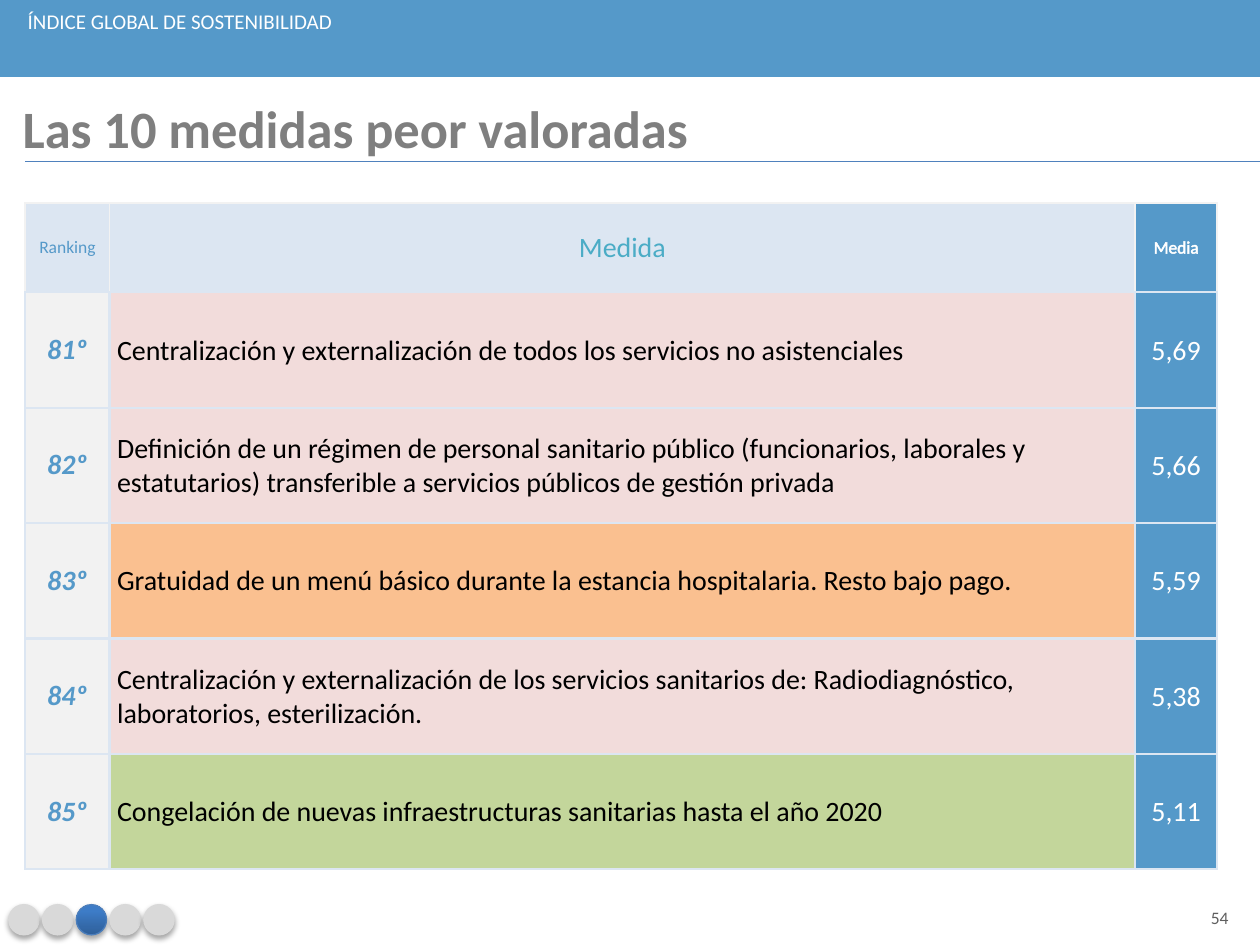
from lxml import etree
from pptx import Presentation
from pptx.dml.color import RGBColor
from pptx.enum.shapes import MSO_CONNECTOR, MSO_SHAPE
from pptx.enum.text import MSO_ANCHOR, PP_ALIGN
from pptx.oxml import parse_xml
from pptx.oxml.ns import qn
from pptx.util import Inches, Pt

LEFT, CENTER = PP_ALIGN.LEFT, PP_ALIGN.CENTER
TOP, MIDDLE = MSO_ANCHOR.TOP, MSO_ANCHOR.MIDDLE
RECT, OVAL = MSO_SHAPE.RECTANGLE, MSO_SHAPE.OVAL
NS = 'xmlns:a="http://schemas.openxmlformats.org/drawingml/2006/main"'

COLORS = {
    "blue": "5599C9", "teal": "4BACC6", "pale": "DCE6F2", "light": "F2F2F2",
    "pink": "F2DCDB", "orange": "FAC090", "green": "C3D69B", "white": "FFFFFF",
    "black": "000000", "title": "7F7F7F", "number": "5F5F5F", "rule": "4F81BD",
    "dot": "D9D9D9", "dot_low": "2F5F99", "dot_high": "3D7CC7", "dot_line": "4B7EBC",
}

MEASURES = [
    ("81º", "Centralización y externalización de todos los servicios no asistenciales",
     "5,69", "pink"),
    ("82º", "Definición de un régimen de personal sanitario público (funcionarios, "
     "laborales y estatutarios) transferible a servicios públicos de gestión privada",
     "5,66", "pink"),
    ("83º", "Gratuidad de un menú básico durante la estancia hospitalaria. "
     "Resto bajo pago.", "5,59", "orange"),
    ("84º", "Centralización y externalización de los servicios sanitarios de: "
     "Radiodiagnóstico, laboratorios, esterilización.", "5,38", "pink"),
    ("85º", "Congelación de nuevas infraestructuras sanitarias hasta el año 2020",
     "5,11", "green"),
]


def rgb(name):
    return RGBColor.from_string(COLORS[name])


def line_xml(tag, color, width):
    return parse_xml(f'<a:{tag} {NS} w="{Pt(width)}"><a:solidFill><a:srgbClr '
                     f'val="{COLORS[color]}"/></a:solidFill></a:{tag}>')


class Deck:
    """Style and current slide; lengths are in a grid of 100 columns by 75 rows."""

    font = "Calibri"

    def __init__(self):
        self.prs = Presentation()
        self.prs.slide_width, self.prs.slide_height = Inches(10), Inches(7.5)
        self.s = self.prs.slides.add_slide(self.prs.slide_layouts[6])

    def grid(self, *units):
        cell = self.prs.slide_width / 100
        return [round(u * cell) for u in units]

    def paragraph(self, tf, text, size, color, align=LEFT, bold=False, italic=False,
                  outline=None):
        p = tf.paragraphs[0]
        p.text = text
        p.alignment = align
        for r in p.runs:
            f = r.font
            f.name, f.size, f.bold, f.italic = self.font, Pt(size), bold, italic
            f.color.rgb = rgb(color)
            if outline:
                r._r.get_or_add_rPr().insert(0, line_xml("ln", outline, 0.75))
        return p

    def text(self, box, text, size, color, inset=1.2, anchor=TOP, after=0, **style):
        tf = self.s.shapes.add_textbox(*self.grid(*box)).text_frame
        tf.word_wrap, tf.vertical_anchor = True, anchor
        tf.margin_left = tf.margin_right = tf.margin_top = tf.margin_bottom = \
            self.grid(inset)[0]
        self.paragraph(tf, text, size, color, **style).space_after = Pt(after)

    def shape(self, kind, box, fill, line=None):
        sp = self.s.shapes.add_shape(kind, *self.grid(*box))
        sp.shadow.inherit = False
        sp.fill.solid()
        sp.fill.fore_color.rgb = rgb(fill)
        if line:
            sp.line.color.rgb, sp.line.width = rgb(line), Pt(0.75)
        else:
            sp.line.fill.background()
        return sp

    def dot(self, box, active):
        sp = self.shape(OVAL, box, "dot", "dot_line" if active else "dot")
        if active:
            sp.fill.gradient()
            sp.fill.gradient_angle = 90
            stops = zip(sp.fill.gradient_stops, ("dot_low", "dot_high"), (0, 0.8))
            for stop, color, position in stops:
                stop.color.rgb, stop.position = rgb(color), position
        effects = sp._element.spPr.find(qn("a:effectLst"))
        effects.append(parse_xml(
            f'<a:outerShdw {NS} blurRad="{Pt(3.1)}" dist="{Pt(1.8)}" dir="5400000" '
            'rotWithShape="0"><a:srgbClr val="000000"><a:alpha val="35000"/>'
            '</a:srgbClr></a:outerShdw>'))

    def rule(self, x1, y1, x2, y2, color):
        c = self.s.shapes.add_connector(MSO_CONNECTOR.STRAIGHT,
                                        *self.grid(x1, y1, x2, y2))
        c.line.color.rgb, c.line.width = rgb(color), Pt(0.75)
        etree.SubElement(c._element.spPr, qn("a:effectLst"))

    def table(self, x, y, widths, heights):
        frame = self.s.shapes.add_table(
            len(heights), len(widths), *self.grid(x, y, sum(widths), sum(heights)))
        for col, width in zip(frame.table.columns, self.grid(*widths)):
            col.width = width
        for row, height in zip(frame.table.rows, self.grid(*heights)):
            row.height = height
        return frame.table

    def cell(self, cell, text, size, color, fill, margins, edge=("pale", 1.5), **style):
        cell.fill.solid()
        cell.fill.fore_color.rgb = rgb(fill)
        cell.vertical_anchor = MIDDLE
        (cell.margin_left, cell.margin_top, cell.margin_right,
         cell.margin_bottom) = self.grid(*margins)
        self.paragraph(cell.text_frame, text, size, color, **style)
        borders = [("lnL", *edge), ("lnR", *edge), ("lnT", *edge), ("lnB", "pale", 1.5)]
        for i, border in enumerate(borders):
            cell._tc.get_or_add_tcPr().insert(i, line_xml(*border))


def main():
    d = Deck()

    # Top band and page number
    d.shape(RECT, (0, 0, 100, 6.1), "blue")
    d.text((94.3, 71.2, 5, 3.3), "54", 10, "number", inset=0.5, anchor=MIDDLE,
           align=CENTER)

    # Table of measures
    header, body = 7.1, (52.9 - 7.1) / len(MEASURES)
    t = d.table(2, 16.1, (6.7, 81.4, 6.5), [header] + [body] * len(MEASURES))
    wide, narrow, tight = (0.9, 0.2, 0.9, 0.2), (0.6, 0.1, 0.1, 0), (0.1, 0.1, 0.1, 0)
    heads = [("Ranking", 10, "blue", "pale", "teal"),
             ("Medida", 16, "teal", "pale", None),
             ("Media", 10, "white", "blue", "white")]
    for col, (text, size, color, fill, outline) in enumerate(heads):
        d.cell(t.cell(0, col), text, size, color, fill, wide, edge=("light", 1),
               align=CENTER, outline=outline)
    for row, (rank, measure, mean, fill) in enumerate(MEASURES, 1):
        d.cell(t.cell(row, 0), rank, 16, "blue", "light", wide, align=CENTER,
               bold=True, italic=True)
        d.cell(t.cell(row, 1), measure, 16, "black", fill, narrow)
        d.cell(t.cell(row, 2), mean, 16, "white", "blue", tight, align=CENTER)

    # Progress dots
    for i in range(5):
        d.dot((0.7 + 2.68 * i, 71.8, 2.4, 2.4), active=i == 2)

    # Title, rule and section name
    d.text((0.6, 6.4, 98.8, 7.4), "Las 10 medidas peor valoradas", 30, "title",
           after=6, bold=True)
    d.rule(2, 12.8, 100, 12.8, "rule")
    d.text((1, -0.3, 98.8, 13.4), "ÍNDICE GLOBAL DE SOSTENIBILIDAD", 12, "white",
           after=6)

    d.prs.save("out.pptx")


if __name__ == "__main__":
    main()
